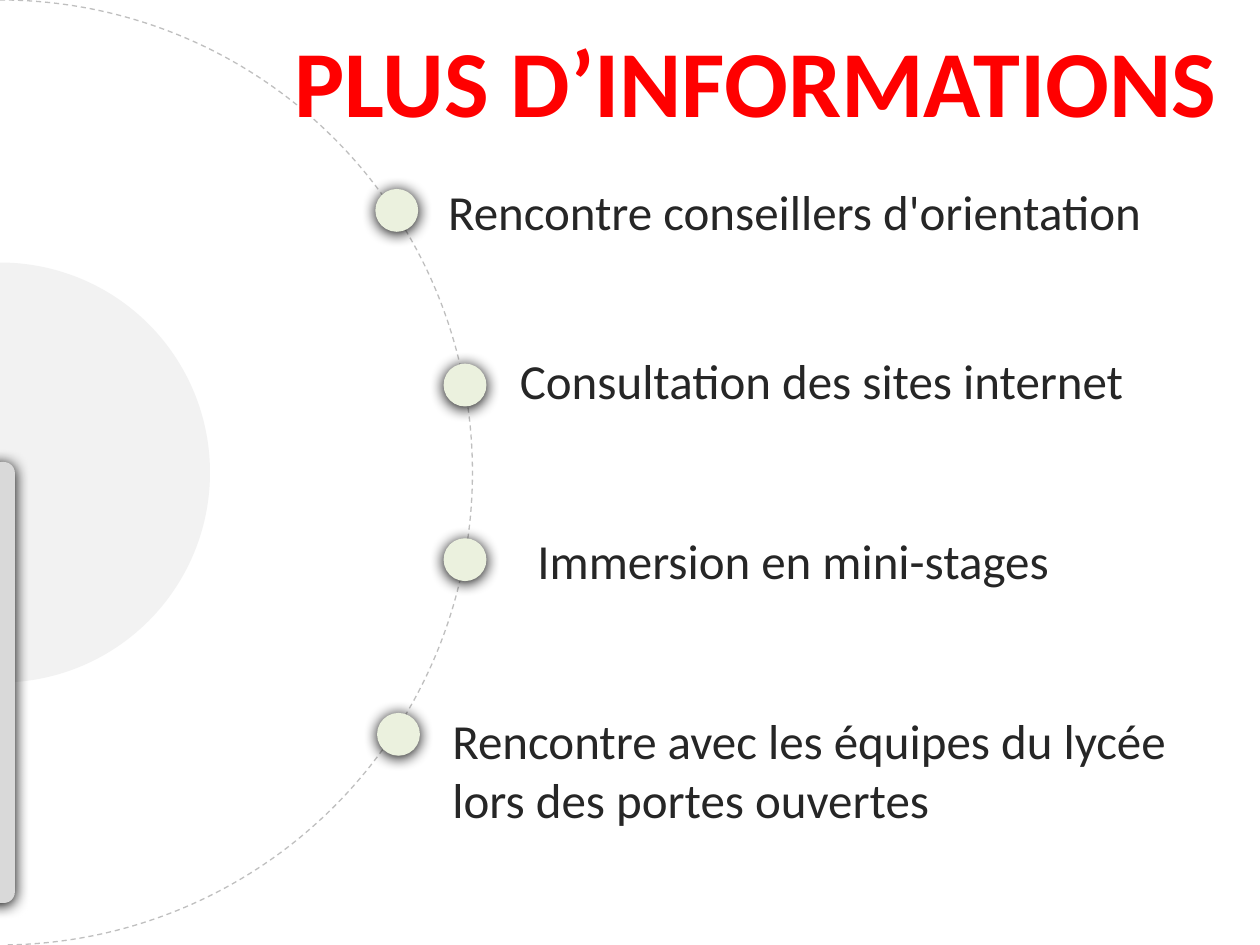
from dataclasses import dataclass

import pptx
import pptx.dml.color
import pptx.enum.dml
import pptx.enum.shapes
import pptx.enum.text
import pptx.oxml
import pptx.oxml.ns
import pptx.util

Pt = pptx.util.Pt
SHAPE = pptx.enum.shapes.MSO_SHAPE
ANCHOR = pptx.enum.text.MSO_ANCHOR
FONT = "Calibri"
COLORS = {
    "title": "FF0000",
    "text": "262626",
    "dot": "EBF1DE",
    "orbit": "FFFFFF",
    "orbit_line": "BFBFBF",
    "core": "F2F2F2",
    "tab": "D9D9D9",
}
SLIDE_W, SLIDE_H = 720, 540
DOT_SIZE = 24.5
DOT_TOP = 108
DOT_PITCH = 99.8


@dataclass
class Stop:
    text: str
    dot_left: float
    left: float
    top: float
    width: float
    height: float = 41


STOPS = [
    Stop("Rencontre conseillers d'orientation", 214.5, 249, 100, 451.5),
    Stop("Consultation des sites internet", 253.5, 290, 196.5, 427),
    Stop("Immersion en mini-stages", 253.5, 300, 299.5, 356.5),
    Stop("Rencontre avec les équipes du lycée lors des portes ouvertes",
         215.5, 251.5, 402.5, 453.5, 75),
]


def rgb(name: str) -> pptx.dml.color.RGBColor:
    return pptx.dml.color.RGBColor.from_string(COLORS[name])


def add_shape(s, kind, left: float, top: float, width: float, height: float, color: str):
    sp = s.shapes.add_shape(kind, Pt(left), Pt(top), Pt(width), Pt(height))
    sp.fill.solid()
    sp.fill.fore_color.rgb = rgb(color)
    sp.line.fill.background()
    sp.shadow.inherit = False
    return sp


def add_half_disc(s, radius: float, end: float, color: str):
    sp = add_shape(s, SHAPE.ARC, -radius, SLIDE_H / 2 - radius, 2 * radius, 2 * radius, color)
    sp.adjustments[0] = 162
    sp.adjustments[1] = end
    return sp


def add_shadow(sp) -> None:
    effects = sp.element.spPr.find(pptx.oxml.ns.qn("a:effectLst"))
    effects.append(pptx.oxml.parse_xml(
        f'<a:outerShdw {pptx.oxml.ns.nsdecls("a")} blurRad="{Pt(8.5)}" dist="{Pt(1)}" '
        'dir="5400000" algn="t" rotWithShape="0"><a:srgbClr val="000000"/></a:outerShdw>'))


def set_text(sp, text: str, size: float, color: str, bold: bool = False):
    tf = sp.text_frame
    tf.text = text
    p = tf.paragraphs[0]
    p.font.name = FONT
    p.font.size = Pt(size)
    p.font.bold = bold
    p.font.color.rgb = rgb(color)
    return tf


def add_label(s, stop: Stop) -> None:
    sp = s.shapes.add_textbox(Pt(stop.left), Pt(stop.top), Pt(stop.width), Pt(stop.height))
    tf = set_text(sp, stop.text, 28, "text")
    tf.word_wrap = True


def add_dot(s, stop: Stop, index: int) -> None:
    sp = add_shape(s, SHAPE.OVAL, stop.dot_left, DOT_TOP + index * DOT_PITCH,
                   DOT_SIZE, DOT_SIZE, "dot")
    add_shadow(sp)


def format_title(s) -> None:
    sp = s.shapes.title
    sp.left, sp.top, sp.width, sp.height = Pt(158.5), Pt(9.5), Pt(547), Pt(72.5)
    tf = set_text(sp, "PLUS D’INFORMATIONS", 54, "title", True)
    tf.word_wrap = False
    tf.auto_size = pptx.enum.text.MSO_AUTO_SIZE.NONE
    tf.vertical_anchor = ANCHOR.TOP
    tf.paragraphs[0].alignment = pptx.enum.text.PP_ALIGN.CENTER
    sp.element.getparent().append(sp.element)


def main() -> None:
    prs = pptx.Presentation()
    prs.slide_width, prs.slide_height = Pt(SLIDE_W), Pt(SLIDE_H)
    s = prs.slides.add_slide(prs.slide_layouts[5])

    orbit = add_half_disc(s, 270, 53.71, "orbit")
    orbit.line.color.rgb = rgb("orbit_line")
    orbit.line.width = Pt(0.75)
    orbit.line.dash_style = pptx.enum.dml.MSO_LINE.DASH

    for i, stop in enumerate(STOPS):
        add_label(s, stop)
        add_dot(s, stop, i)

    add_half_disc(s, 120, 53.6, "core")

    tab = add_shape(s, SHAPE.ROUNDED_RECTANGLE, -9.5, 264, 18, 252, "tab")
    tab.adjustments[0] = 0.35
    tab.rotation = 180
    add_shadow(tab)

    format_title(s)
    prs.save("out.pptx")


if __name__ == "__main__":
    main()
